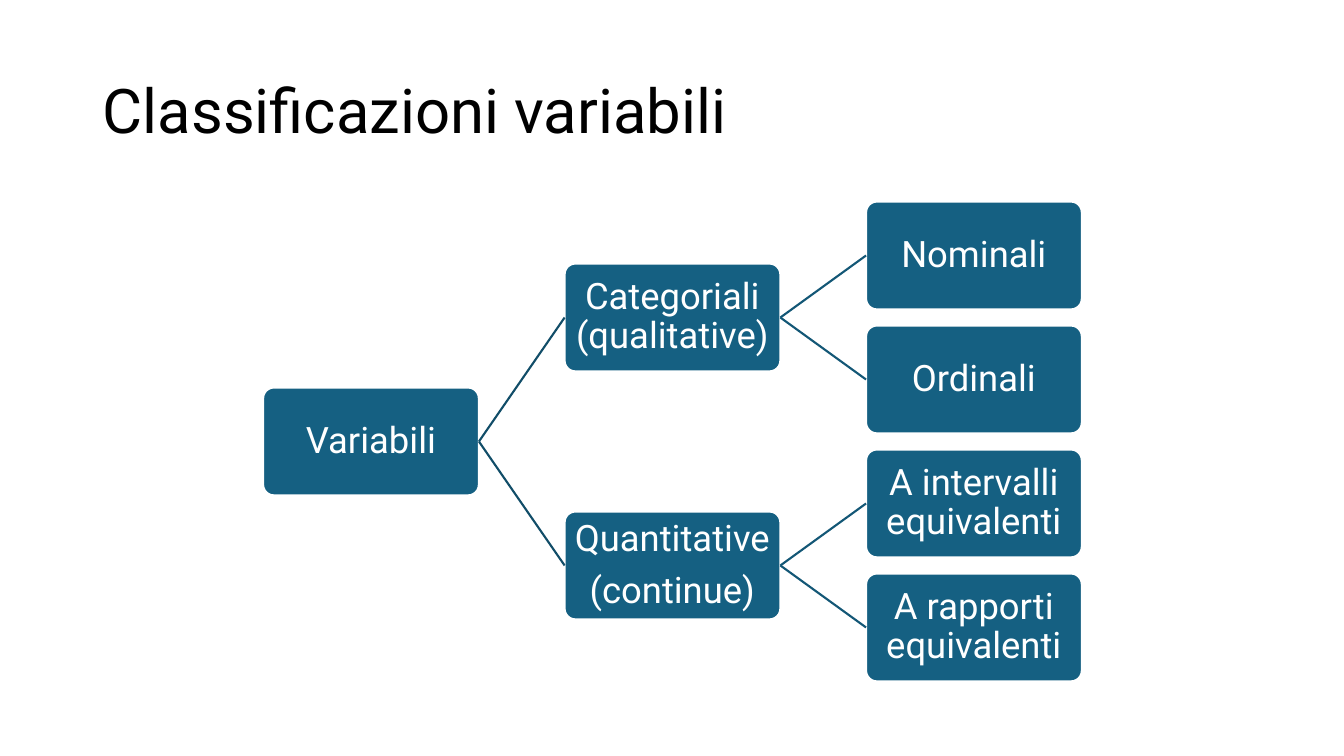
from lxml import etree
from pptx import Presentation
from pptx.dml.color import RGBColor
from pptx.enum import shapes, text
from pptx.oxml import ns
from pptx.util import Inches, Pt

FONT = "Roboto"
NODE_WIDTH, NODE_HEIGHT = 2.14, 1.07
COLUMN_STEP, ROW_STEP = 2.99, 1.23
BRANCH_COLORS = ["114D68", "135776"]
VARIABLES = ("Variabili", [
    ("Categoriali (qualitative)", [("Nominali", []), ("Ordinali", [])]),
    ("Quantitative\n(continue)", [
        ("A intervalli equivalenti", []),
        ("A rapporti equivalenti", []),
    ]),
])


def rgb(color):
    """Turn a hex string into a colour."""
    return RGBColor.from_string(color)


def style_text(frame, size, color, alignment):
    """Format every paragraph of a vertically centred text frame."""
    frame.word_wrap = True
    frame.auto_size = text.MSO_AUTO_SIZE.NONE
    frame.vertical_anchor = text.MSO_ANCHOR.MIDDLE
    for paragraph in frame.paragraphs:
        paragraph.alignment = alignment
        paragraph.line_spacing = 0.9
        paragraph.font.name = FONT
        paragraph.font.size = Pt(size)
        paragraph.font.color.rgb = rgb(color)


def add_title(slide, wording, left, top, width, height):
    """Fill the title placeholder and move it to its box."""
    title = slide.shapes.title
    title.left, title.top = Inches(left), Inches(top)
    title.width, title.height = Inches(width), Inches(height)
    title.text_frame.text = wording
    style_text(title.text_frame, 44, "000000", text.PP_ALIGN.LEFT)


def add_node(slide, label, left, top):
    """Draw one labelled box of the tree."""
    node = slide.shapes.add_shape(
        shapes.MSO_SHAPE.ROUNDED_RECTANGLE, Inches(left), Inches(top),
        Inches(NODE_WIDTH), Inches(NODE_HEIGHT))
    node.adjustments[0] = 0.1
    node.shadow.inherit = False
    node.fill.solid()
    node.fill.fore_color.rgb = rgb("156082")
    node.line.color.rgb = rgb("FFFFFF")
    node.line.width = Pt(1.5)
    frame = node.text_frame
    frame.text = label
    frame.margin_left = frame.margin_right = Inches(0.05)
    frame.margin_top = frame.margin_bottom = Inches(0.05)
    style_text(frame, 26, "FFFFFF", text.PP_ALIGN.CENTER)
    for paragraph in frame.paragraphs:
        paragraph.space_after = Pt(9.1)
    return node


def add_branch(slide, parent, child, color):
    """Join the right side of a parent to the left side of its child."""
    branch = slide.shapes.add_connector(shapes.MSO_CONNECTOR.STRAIGHT, 0, 0, 0, 0)
    branch.begin_connect(parent, 3)
    branch.end_connect(child, 1)
    branch.line.color.rgb = rgb(color)
    branch.line.width = Pt(1.5)
    etree.SubElement(branch.element.spPr, ns.qn("a:effectLst"))


def count_leaves(children):
    """Count the rows that a node with these children spans."""
    return sum(count_leaves(grandchildren) for _, grandchildren in children) or 1


def add_tree(slide, tree, left, top, level=0):
    """Draw a tree to the right, each node centred on its rows."""
    label, children = tree
    node_top = top + (count_leaves(children) - 1) / 2 * ROW_STEP
    node = add_node(slide, label, left, node_top)
    for child_tree in children:
        child = add_tree(slide, child_tree, left + COLUMN_STEP, top, level + 1)
        add_branch(slide, node, child, BRANCH_COLORS[level])
        top += count_leaves(child_tree[1]) * ROW_STEP
    return node


def main():
    """Build the slide and save it."""
    deck = Presentation()
    deck.slide_width, deck.slide_height = Inches(13.33), Inches(7.5)
    slide = deck.slides.add_slide(deck.slide_layouts[5])
    add_title(slide, "Classificazioni variabili", 0.92, 0.4, 11.5, 1.45)
    add_tree(slide, VARIABLES, 2.61, 2)
    deck.save("out.pptx")


if __name__ == "__main__":
    main()
